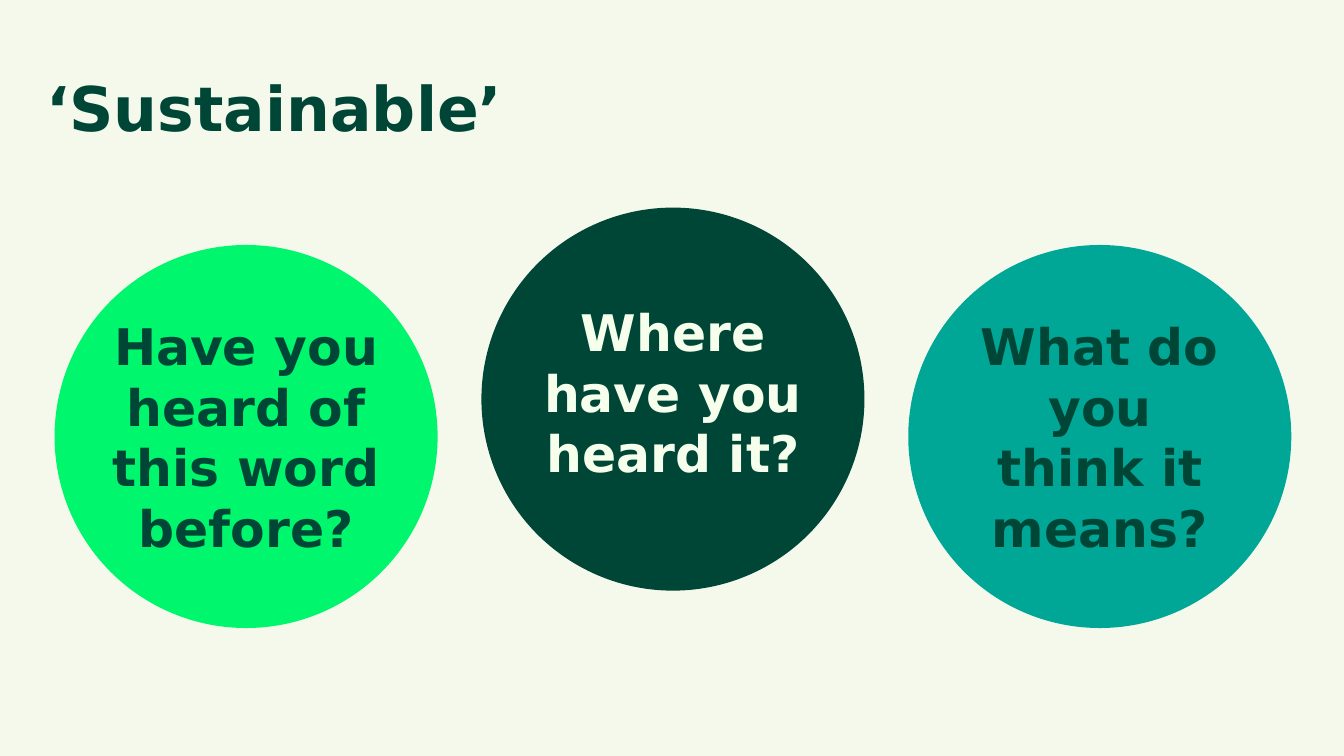
from pptx import Presentation
from pptx.dml.color import RGBColor
from pptx.enum.shapes import MSO_SHAPE
from pptx.enum.text import MSO_ANCHOR, PP_ALIGN
from pptx.util import Pt

OVAL = MSO_SHAPE.OVAL
MIDDLE = MSO_ANCHOR.MIDDLE
LEFT, CENTER = PP_ALIGN.LEFT, PP_ALIGN.CENTER

CREAM = RGBColor(0xF5, 0xF9, 0xEB)
PALE = RGBColor(0xF5, 0xFF, 0xEC)
FOREST = RGBColor(0x00, 0x46, 0x36)
LIME = RGBColor(0x00, 0xF6, 0x6C)
TEAL = RGBColor(0x00, 0xA6, 0x96)

FONT = "DejaVu Sans"
DIAMETER = 273.6
FIRST_LEFT = 39
STEP = 304.9
SIDE_TOP, MIDDLE_TOP = 175, 148.3

QUESTIONS = [
    ("Have you heard of this word before?", LIME, FOREST, SIDE_TOP, 221, 209.5, 181.4),
    ("Where have you heard it?", FOREST, PALE, MIDDLE_TOP, 211, 206, 138.2),
    ("What do you think it means?", TEAL, FOREST, SIDE_TOP, 221, 188.6, 181.4),
]


def add_text(slide, wording, left, top, width, height, size, color, align):
    """Add a bold, wrapped, vertically centred text box."""
    box = slide.shapes.add_textbox(Pt(left), Pt(top), Pt(width), Pt(height))
    frame = box.text_frame
    frame.word_wrap = True
    frame.vertical_anchor = MIDDLE
    paragraph = frame.paragraphs[0]
    paragraph.text = wording
    paragraph.alignment = align
    paragraph.font.name = FONT
    paragraph.font.size = Pt(size)
    paragraph.font.bold = True
    paragraph.font.color.rgb = color
    return paragraph


def add_circle(slide, left, top, color):
    """Add a plain filled circle."""
    circle = slide.shapes.add_shape(OVAL, Pt(left), Pt(top), Pt(DIAMETER), Pt(DIAMETER))
    circle.shadow.inherit = False
    circle.fill.solid()
    circle.fill.fore_color.rgb = color
    circle.line.fill.background()


def main():
    """Build the slide of three questions about a word."""
    deck = Presentation()
    deck.slide_width, deck.slide_height = Pt(960), Pt(540)
    slide = deck.slides.add_slide(deck.slide_layouts[6])
    slide.background.fill.solid()
    slide.background.fill.fore_color.rgb = CREAM

    for index, (question, fill, ink, top, text_top, width, height) in enumerate(QUESTIONS):
        left = FIRST_LEFT + index * STEP
        add_circle(slide, left, top, fill)
        text_left = left + (DIAMETER - width) / 2
        add_text(slide, question, text_left, text_top, width, height, 36, ink, CENTER)

    title = add_text(slide, "‘Sustainable’", 26, 27.4, 828, 104.4, 44, FOREST, LEFT)
    title.line_spacing = 0.9
    deck.save("out.pptx")


if __name__ == "__main__":
    main()
